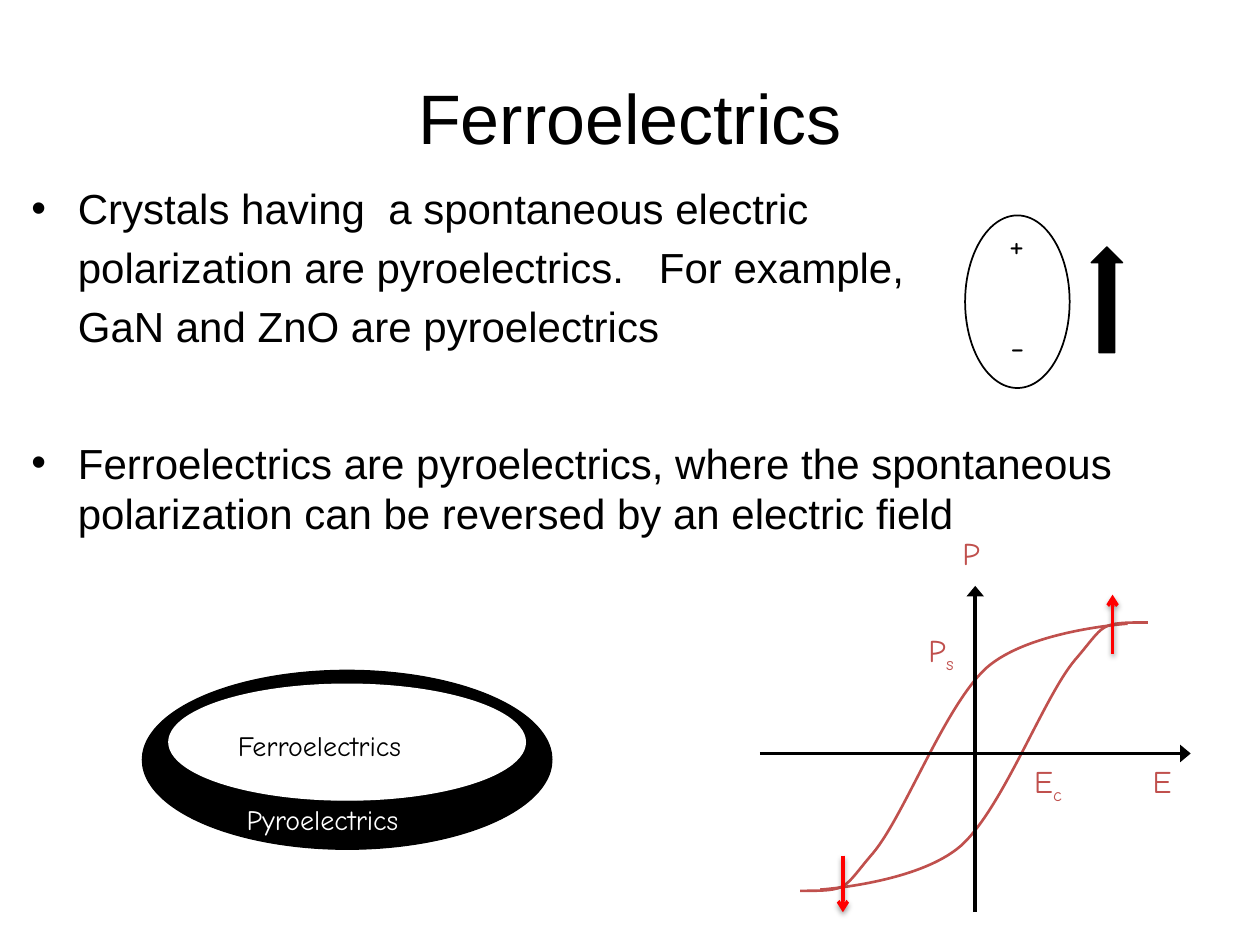
from dataclasses import dataclass

from lxml.etree import SubElement
from pptx import Presentation
from pptx.dml.color import RGBColor as RGB
from pptx.enum.shapes import MSO_CONNECTOR as Link, MSO_SHAPE as Kind
from pptx.enum.text import MSO_ANCHOR as Anchor, MSO_AUTO_SIZE as Auto, PP_ALIGN as Align
from pptx.oxml.ns import qn
from pptx.util import Inches, Pt


@dataclass(frozen=True)
class Theme:
    head: str = "Arial"
    hand: str = "Comic Neue"
    black: str = "000000"
    white: str = "FFFFFF"
    curve: str = "C0504D"
    red: str = "FF0000"
    title: int = 40
    body: int = 24
    sign: int = 20
    axis: int = 18
    label: int = 16


def write(para, text, size, font, color, base=None):
    """Add a run; base shifts it as a percentage, negative for subscript."""
    run = para.add_run()
    run.text = text
    run.font.size, run.font.name = Pt(size), font
    run.font.color.rgb = RGB.from_string(color)
    if base is not None:
        run.font._element.set("baseline", str(base * 1000))


def bend(form):
    """Turn each three line segments of a freeform into one cubic curve."""
    track = next(form._element.iter(qn("a:path")))
    lines = track.findall(qn("a:lnTo"))
    for i in range(0, len(lines), 3):
        cubic = SubElement(track, qn("a:cubicBezTo"))
        for line in lines[i:i + 3]:
            cubic.append(line[0])
            track.remove(line)


class Deck:
    def __init__(self, theme):
        self.theme = theme
        self.prs = Presentation()
        self.prs.slide_width, self.prs.slide_height = Inches(10), Inches(7.5)
        self.slide = self.prs.slides.add_slide(self.prs.slide_layouts[6])
        self.shapes = self.slide.shapes

    def box(self, x, y, w, h, wrap=True):
        frame = self.shapes.add_textbox(
            Inches(x), Inches(y), Inches(w), Inches(h)).text_frame
        frame.word_wrap = wrap
        return frame

    def title(self, text):
        frame = self.box(0.5, 0.3, 9, 1.25)
        frame.vertical_anchor = Anchor.MIDDLE
        para = frame.paragraphs[0]
        para.alignment = Align.CENTER
        write(para, text, self.theme.title, self.theme.head, self.theme.black)

    def body(self, items):
        """Fill the main text from (text, has bullet, space before) items."""
        frame = self.box(0.15, 1.4, 9, 5.28)
        for i, (text, bullet, gap) in enumerate(items):
            para = frame.add_paragraph() if i else frame.paragraphs[0]
            para.space_before = Pt(gap)
            props = para._p.get_or_add_pPr()
            props.set("marL", str(Inches(0.37)))
            props.set("indent", str(Inches(-0.37 if bullet else 0)))
            if bullet:
                SubElement(props, qn("a:buFont"), typeface=self.theme.head)
                SubElement(props, qn("a:buChar"), char="•")
            write(para, text, self.theme.body, self.theme.head, self.theme.black)

    def label(self, text, x, y, w, h, size, color, sub=None):
        frame = self.box(x, y, w, h, wrap=False)
        frame.auto_size = Auto.SHAPE_TO_FIT_TEXT
        para = frame.paragraphs[0]
        look = dict(size=size, font=self.theme.hand, color=color)
        write(para, text, **look)
        if sub:
            write(para, sub, base=-25, **look)

    def shape(self, kind, x, y, w, h, fill=None, line=None, width=0.75):
        item = self.shapes.add_shape(
            kind, Inches(x), Inches(y), Inches(w), Inches(h))
        item.shadow.inherit = False
        if fill:
            item.fill.solid()
            item.fill.fore_color.rgb = RGB.from_string(fill)
        else:
            item.fill.background()
        item.line.color.rgb = RGB.from_string(line or fill)
        item.line.width = Pt(width)

    def curve(self, nodes):
        """Draw joined cubic curves: a start, then three nodes for each."""
        (x, y), *rest = [(Inches(a), Inches(b)) for a, b in nodes]
        form = self.shapes.build_freeform(x, y)
        form.add_line_segments(rest, close=False)
        item = form.convert_to_shape()
        bend(item)
        item.shadow.inherit = False
        item.fill.background()
        item.line.color.rgb = RGB.from_string(self.theme.curve)
        item.line.width = Pt(1.5)

    def arrow(self, x1, y1, x2, y2, color, head, wide="med", shade=False):
        item = self.shapes.add_connector(
            Link.STRAIGHT, Inches(x1), Inches(y1), Inches(x2), Inches(y2))
        item.line.color.rgb = RGB.from_string(color)
        item.line.width = Pt(2)
        SubElement(item.line._get_or_add_ln(), qn("a:tailEnd"), type=head, w=wide)
        effects = SubElement(item._element.spPr, qn("a:effectLst"))
        if shade:
            cast = SubElement(effects, qn("a:outerShdw"), blurRad=str(Pt(3.1)),
                              dist=str(Pt(1.6)), dir="5400000", rotWithShape="0")
            tint = SubElement(cast, qn("a:srgbClr"), val=self.theme.black)
            SubElement(tint, qn("a:alpha"), val="38000")


def main():
    theme = Theme()
    deck = Deck(theme)
    black, white = theme.black, theme.white

    deck.title("Ferroelectrics")
    deck.body([
        ("Crystals having  a spontaneous electric", True, 6),
        ("polarization are pyroelectrics.   For example,", False, 4.8),
        ("GaN and ZnO are pyroelectrics", False, 4.8),
        ("Ferroelectrics are pyroelectrics, where the spontaneous "
         "polarization can be reversed by an electric field", True, 49.5),
    ])

    # Nested sets
    deck.shape(Kind.OVAL, 1.13, 5.32, 3.25, 1.42, fill=black)
    deck.shape(Kind.OVAL, 1.34, 5.43, 2.83, 0.92, fill=white)
    deck.label("Ferroelectrics", 1.79, 5.73, 1.72, 0.37, theme.label, black)
    deck.label("Pyroelectrics", 1.86, 6.32, 1.58, 0.37, theme.label, white)

    # Dipole
    deck.shape(Kind.OVAL, 7.66, 1.71, 0.83, 1.37, line=black, width=1)
    deck.label("+", 7.91, 1.72, 0.34, 0.44, theme.sign, black)
    deck.label("-", 7.92, 2.53, 0.32, 0.44, theme.sign, black)
    deck.shape(Kind.UP_ARROW, 8.66, 1.96, 0.25, 0.84, fill=black)

    # Hysteresis loop: the second branch is the first one turned half round
    rise = [(6.35, 7.07), (6.75, 7.07), (6.68, 7.06), (6.93, 6.77),
            (7.18, 6.47), (7.5, 5.6), (7.83, 5.3),
            (8.17, 5), (8.95, 4.95), (8.95, 4.95)]
    deck.curve(rise)
    deck.curve([(15.46 - x, 12.01 - y) for x, y in rise])
    deck.arrow(6.03, 5.98, 9.45, 5.98, black, "triangle", wide="lg")
    deck.arrow(7.74, 7.24, 7.74, 4.65, black, "triangle", wide="lg")
    for text, sub, x, y, w in [("P", None, 7.54, 4.19, 0.33),
                               ("E", None, 9.05, 6, 0.36),
                               ("P", "s", 7.27, 4.96, 0.42),
                               ("E", "c", 8.11, 6, 0.45)]:
        deck.label(text, x, y, w, 0.4, theme.axis, theme.curve, sub=sub)
    for x, start, end in [(8.83, 5.19, 4.72), (6.69, 6.79, 7.24)]:
        deck.arrow(x, start, x, end, theme.red, "arrow", shade=True)

    deck.prs.save("out.pptx")


if __name__ == "__main__":
    main()
